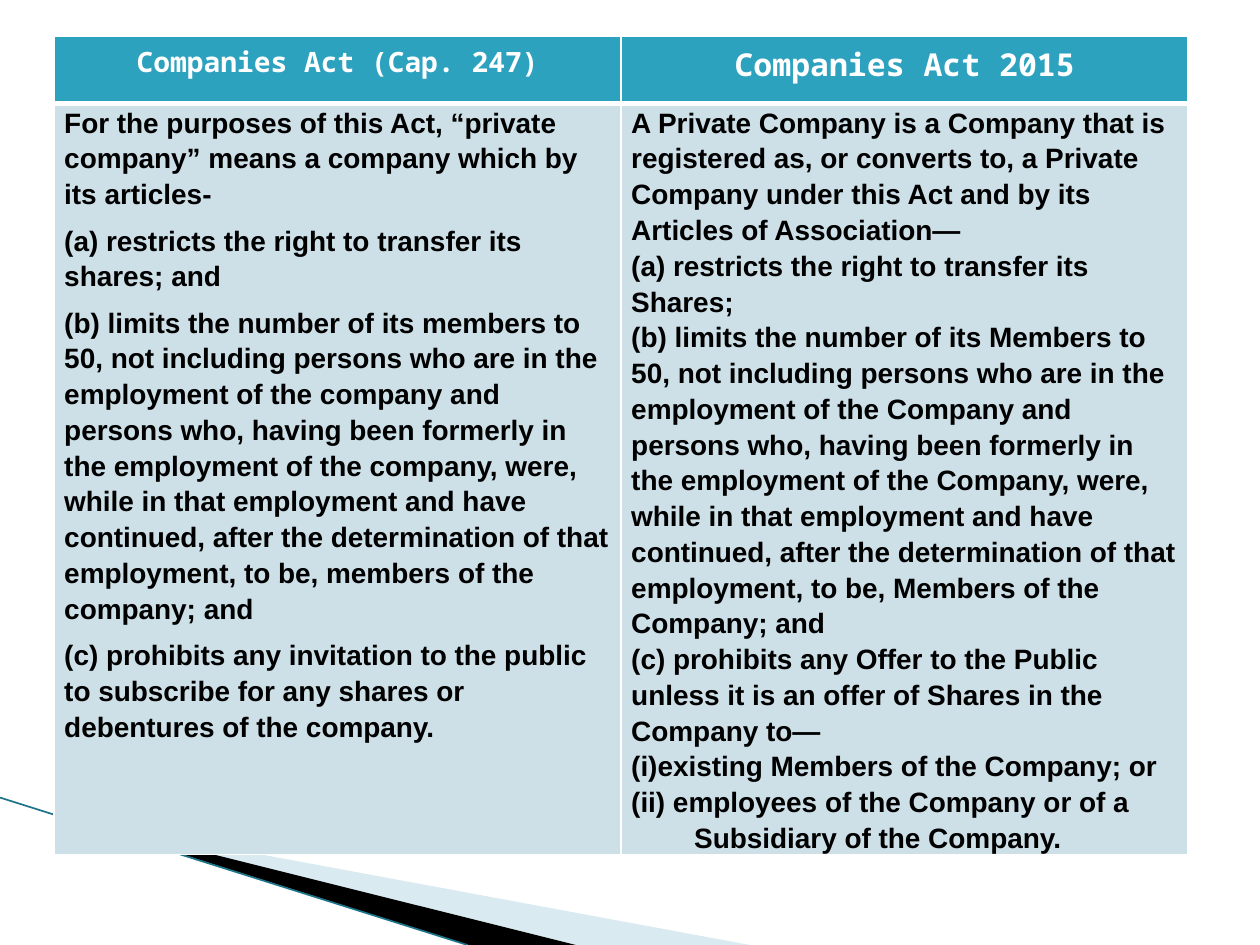
from lxml import etree
from pptx import Presentation
from pptx import util as u
from pptx.dml.color import RGBColor
from pptx.enum import shapes, text
from pptx.oxml.ns import qn

WHITE = RGBColor(0xFF, 0xFF, 0xFF)
BLACK = RGBColor(0, 0, 0)
TEAL = RGBColor(0x2D, 0xA2, 0xBF)
DARK_TEAL = RGBColor(0x1C, 0x74, 0x88)
PALE_BLUE = RGBColor(0xCD, 0xE0, 0xE8)
SKY = RGBColor(0xA0, 0xCB, 0xDC)

WIDTH, HEIGHT = 10, 7.5
TABLE_LEFT, TABLE_TOP, COLUMN_WIDTH = 0.43, 0.29, 4.5
ROW_HEIGHTS = (0.53, 5.44)

COLUMNS = [
    {
        "heading": "Companies Act (Cap. 247)", "heading_size": 16, "space_before": 6,
        "body": [
            "For the purposes of this Act, “private company” means a company which by its articles-",
            "(a) restricts the right to transfer its shares; and",
            "(b) limits the number of its members to 50, not including persons who are in the "
            "employment of the company and persons who, having been formerly in the employment "
            "of the company, were, while in that employment and have continued, after the "
            "determination of that employment, to be, members of the company; and",
            "(c) prohibits any invitation to the public to subscribe for any shares or "
            "debentures of the company.",
        ],
    },
    {
        "heading": "Companies Act 2015", "heading_size": 18, "space_before": 0,
        "body": [
            "A Private Company is a Company that is registered as, or converts to, a Private "
            "Company under this Act and by its Articles of Association—",
            "(a) restricts the right to transfer its Shares;",
            "(b) limits the number of its Members to 50, not including persons who are in the "
            "employment of the Company and persons who, having been formerly in the employment "
            "of the Company, were, while in that employment and have continued, after the "
            "determination of that employment, to be, Members of the Company; and",
            "(c) prohibits any Offer to the Public unless it is an offer of Shares in the Company to—",
            "(i)existing Members of the Company; or",
            "(ii) employees of the Company or of a Subsidiary of the Company.",
        ],
    },
]
HANGING = "(ii)"

# Corner points, fill and opacity in percent
WEDGES = [
    ([(0.55, 6.5), (5.95, HEIGHT), (4.56, HEIGHT)], SKY, 40),
    ([(0.53, 6.49), (4.57, HEIGHT), (3.72, HEIGHT)], BLACK, 100),
]
EDGE = (0, 6.33, 3.71, HEIGHT)


def add_wedge(slide, points, color, opacity):
    corners = [(u.Inches(x), u.Inches(y)) for x, y in points]
    builder = slide.shapes.build_freeform(*corners[0])
    builder.add_line_segments(corners[1:], close=True)
    shape = builder.convert_to_shape()
    shape.shadow.inherit = False
    shape.line.fill.background()
    shape.fill.solid()
    shape.fill.fore_color.rgb = color
    if opacity < 100:
        fill_color = shape._element.spPr.find(".//" + qn("a:srgbClr"))
        etree.SubElement(fill_color, qn("a:alpha"), val=str(opacity * 1000))


def add_edge(slide):
    line = slide.shapes.add_connector(shapes.MSO_CONNECTOR.STRAIGHT, *map(u.Inches, EDGE))
    line.line.color.rgb = DARK_TEAL
    line.line.width = u.Pt(0.95)
    etree.SubElement(line._element.spPr, qn("a:effectLst"))


def style_cell(cell, color, **borders):
    """Fill the cell and draw white borders, 1 point wide unless a side is named."""
    properties = cell._tc.get_or_add_tcPr()
    for side in "LRTB":
        width = u.Pt(borders.get(side, 1))
        border = etree.SubElement(properties, qn(f"a:ln{side}"), w=str(width))
        fill = etree.SubElement(border, qn("a:solidFill"))
        etree.SubElement(fill, qn("a:srgbClr"), val=str(WHITE))
    cell.fill.solid()
    cell.fill.fore_color.rgb = color


def write(paragraph, words, *, font, size, color, align=text.PP_ALIGN.LEFT,
          spacing=1.0, before=0, hanging=0):
    if hanging:
        properties = paragraph._p.get_or_add_pPr()
        properties.set("marL", str(u.Inches(hanging)))
        properties.set("indent", str(-u.Inches(hanging)))
    paragraph.alignment = align
    paragraph.line_spacing = spacing
    paragraph.space_before = u.Pt(before)
    run = paragraph.add_run()
    run.text = words
    run.font.name, run.font.size, run.font.bold = font, u.Pt(size), True
    run.font.color.rgb = color


def add_comparison(slide):
    frame = slide.shapes.add_table(
        len(ROW_HEIGHTS), len(COLUMNS), u.Inches(TABLE_LEFT), u.Inches(TABLE_TOP),
        u.Inches(COLUMN_WIDTH * len(COLUMNS)), u.Inches(sum(ROW_HEIGHTS)))
    table = frame.table
    for row, height in zip(table.rows, ROW_HEIGHTS):
        row.height = u.Inches(height)

    for index, column in enumerate(COLUMNS):
        table.columns[index].width = u.Inches(COLUMN_WIDTH)
        heading, body = table.cell(0, index), table.cell(1, index)
        style_cell(heading, TEAL, B=3)
        write(heading.text_frame.paragraphs[0], column["heading"], font="Noto Sans Mono",
              size=column["heading_size"], color=WHITE, align=text.PP_ALIGN.CENTER)

        style_cell(body, PALE_BLUE, T=3)
        body.margin_left = body.margin_right = u.Inches(0.08)
        body.margin_top = body.margin_bottom = 0
        for number, words in enumerate(column["body"]):
            frame = body.text_frame
            paragraph = frame.add_paragraph() if number else frame.paragraphs[0]
            write(paragraph, words, font="Arial", size=16, color=BLACK, spacing=1.15,
                  before=column["space_before"] if number else 0,
                  hanging=0.5 if words.startswith(HANGING) else 0)


def main():
    presentation = Presentation()
    presentation.slide_width = u.Inches(WIDTH)
    presentation.slide_height = u.Inches(HEIGHT)
    slide = presentation.slides.add_slide(presentation.slide_layouts[6])
    for wedge in WEDGES:
        add_wedge(slide, *wedge)
    add_edge(slide)
    add_comparison(slide)
    presentation.save("out.pptx")


if __name__ == "__main__":
    main()
